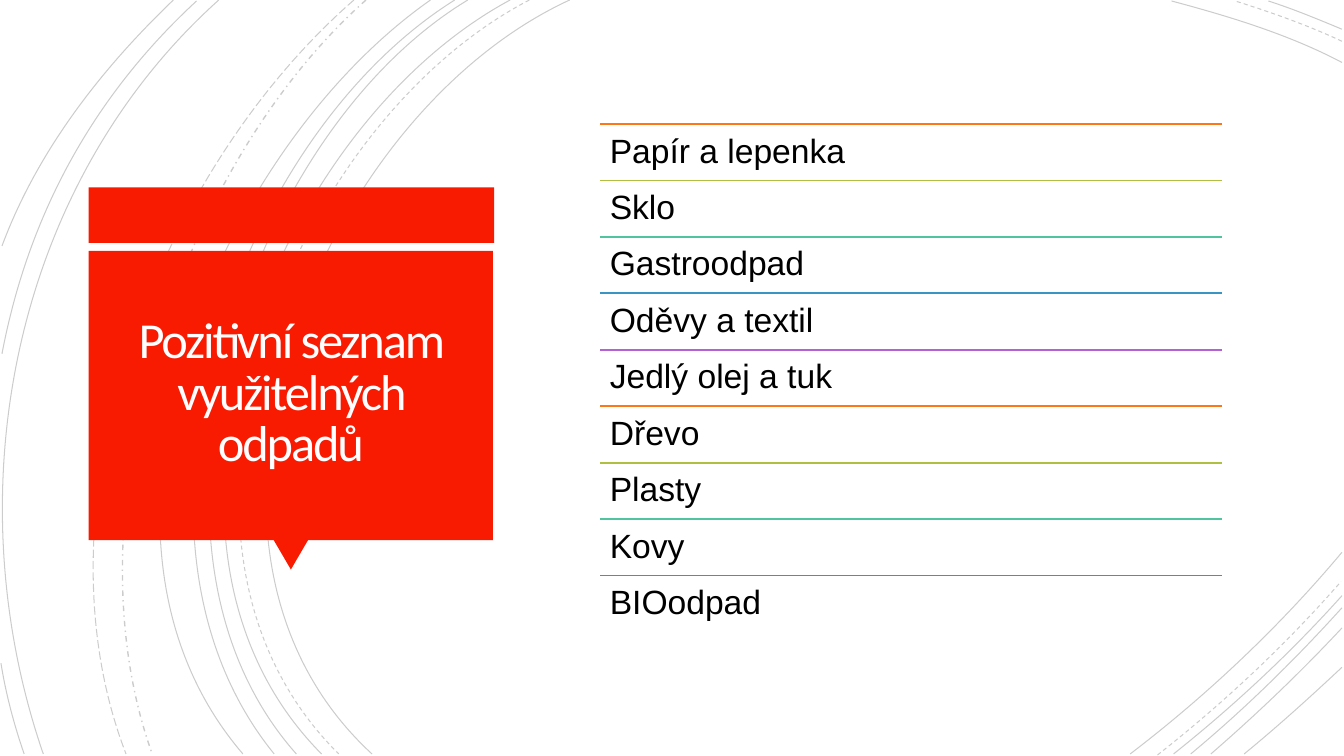
import lxml.etree
import pptx
import pptx.dml.color
import pptx.enum.dml
import pptx.enum.shapes
import pptx.enum.text
import pptx.oxml.ns
import pptx.util

PX = 9144
THEME = {
    "red": "F81B02",
    "title": "FFFEFF",
    "text": "000000",
    "arc": "000000",
    "arc_alpha": "20000",
    "rules": ["FC7715", "AFBF41", "50C49F", "3B95C4", "B560D4"],
    "title_font": "Calibri",
    "list_font": "Arial",
    "title_size": 36,
    "list_size": 24,
}
RGB = pptx.dml.color.RGBColor.from_string
qn = pptx.oxml.ns.qn
DASH = pptx.enum.dml.MSO_LINE
SHAPE = pptx.enum.shapes.MSO_SHAPE
ALIGN = pptx.enum.text.PP_ALIGN
ANCHOR = pptx.enum.text.MSO_ANCHOR


def write(sp, text, font, size, color, margin, spacing, align=ALIGN.LEFT,
          anchor=ANCHOR.TOP, tracking=0):
    tf = sp.text_frame
    tf.word_wrap = True
    tf.auto_size = pptx.enum.text.MSO_AUTO_SIZE.NONE
    tf.vertical_anchor = anchor
    tf.margin_left = tf.margin_right = margin * PX
    tf.margin_top = tf.margin_bottom = margin * PX
    p = tf.paragraphs[0]
    p.alignment = align
    p.line_spacing = spacing
    r = p.add_run()
    r.text = text
    r.font.name = font
    r.font.size = pptx.util.Pt(size)
    r.font.color.rgb = RGB(color)
    if tracking:
        r.font._element.set("spc", str(tracking))


prs = pptx.Presentation()
prs.slide_width = 1333 * PX
prs.slide_height = 750 * PX
s = prs.slides.add_slide(prs.slide_layouts[5])

arcs = [
    (565, 0, 315, 115, 143, 540, 369, 748, DASH.SOLID),
    (1331, 62, 1278, 34, 1218, 16, 1162, 1, DASH.SOLID),
    (1121, 748, 1197, 690, 1269, 622, 1331, 548, DASH.SOLID),
    (525, 0, 285, 125, 123, 537, 336, 748, DASH.DASH),
    (1331, 41, 1297, 25, 1260, 12, 1225, 1, DASH.DASH),
    (1148, 749, 1213, 698, 1275, 640, 1330, 577, DASH.DASH),
    (506, 0, 270, 127, 110, 537, 319, 748, DASH.SOLID),
    (1331, 29, 1307, 19, 1283, 9, 1258, 1, DASH.SOLID),
    (1164, 748, 1223, 701, 1280, 648, 1331, 591, DASH.SOLID),
    (464, 0, 244, 133, 110, 541, 294, 748, DASH.SOLID),
    (1181, 748, 1234, 704, 1284, 655, 1331, 603, DASH.SOLID),
    (451, 0, 231, 138, 97, 533, 272, 748, DASH.SOLID),
    (1201, 748, 1246, 709, 1290, 667, 1331, 623, DASH.SOLID),
    (427, 0, 217, 147, 53, 529, 241, 748, DASH.SOLID),
    (1234, 748, 1267, 721, 1299, 692, 1331, 662, DASH.SOLID),
    (363, 0, 176, 166, 65, 509, 151, 748, DASH.DASH_DOT),
    (351, 0, 157, 169, 29, 499, 125, 748, DASH.LONG_DASH),
    (217, 0, 11, 185, -46, 490, 43, 748, DASH.SOLID),
    (195, 1, 92, 96, 28, 214, 2, 351, DASH.SOLID),
    (1, 658, 6, 689, 14, 719, 24, 748, DASH.SOLID),
    (172, 0, 100, 69, 37, 150, 2, 244, DASH.SOLID),
]
for *coords, dash in arcs:
    points = list(zip(coords[0::2], coords[1::2]))
    builder = s.shapes.build_freeform(*points[0], scale=PX)
    builder.add_line_segments(points[1:], close=False)
    sp = builder.convert_to_shape()
    segments = list(sp.element.spPr.iter(qn("a:lnTo")))
    curve = lxml.etree.SubElement(segments[0].getparent(), qn("a:cubicBezTo"))
    for segment in segments:
        curve.append(segment[0])
        segment.getparent().remove(segment)
    sp.shadow.inherit = False
    sp.fill.background()
    sp.line.color.rgb = RGB(THEME["arc"])
    sp.line.width = pptx.util.Pt(1 if dash == DASH.DASH_DOT else 0.75)
    sp.line.dash_style = dash
    color = sp.element.spPr.find(qn("a:ln")).find(".//" + qn("a:srgbClr"))
    lxml.etree.SubElement(color, qn("a:alpha")).set("val", THEME["arc_alpha"])

for kind, x, y, w, h, rotation in [
    (SHAPE.RECTANGLE, 88, 186, 402, 55, 0),
    (SHAPE.ISOSCELES_TRIANGLE, 271, 535, 35, 30, 180),
    (SHAPE.RECTANGLE, 88, 249, 401, 287, 0),
]:
    sp = s.shapes.add_shape(kind, x * PX, y * PX, w * PX, h * PX)
    sp.rotation = rotation
    sp.shadow.inherit = False
    sp.fill.solid()
    sp.fill.fore_color.rgb = RGB(THEME["red"])
    sp.line.fill.background()

title = s.shapes.title
title.left, title.top, title.width, title.height = 97 * PX, 257 * PX, 383 * PX, 269 * PX
write(title, "Pozitivní seznam využitelných odpadů", font=THEME["title_font"],
      size=THEME["title_size"], color=THEME["title"], margin=25, spacing=0.85,
      align=ALIGN.CENTER, anchor=ANCHOR.MIDDLE, tracking=-150)
title.element.getparent().append(title.element)

wastes = ["Papír a lepenka", "Sklo", "Gastroodpad", "Oděvy a textil",
          "Jedlý olej a tuk", "Dřevo", "Plasty", "Kovy", "BIOodpad"]
LEFT, TOP, WIDTH, ROW = 595, 123, 617, 56
for i, waste in enumerate(wastes):
    y = (TOP + i * ROW) * PX
    rule = s.shapes.add_connector(pptx.enum.shapes.MSO_CONNECTOR.STRAIGHT,
                                  LEFT * PX, y, (LEFT + WIDTH) * PX, y)
    rule.line.color.rgb = RGB(THEME["rules"][i % len(THEME["rules"])])
    rule.line.width = pptx.util.Pt(1.25)
    lxml.etree.SubElement(rule.element.spPr, qn("a:effectLst"))
    sp = s.shapes.add_textbox(LEFT * PX, y, WIDTH * PX, ROW * PX)
    write(sp, waste, font=THEME["list_font"], size=THEME["list_size"],
          color=THEME["text"], margin=10, spacing=0.9)

prs.save("out.pptx")
